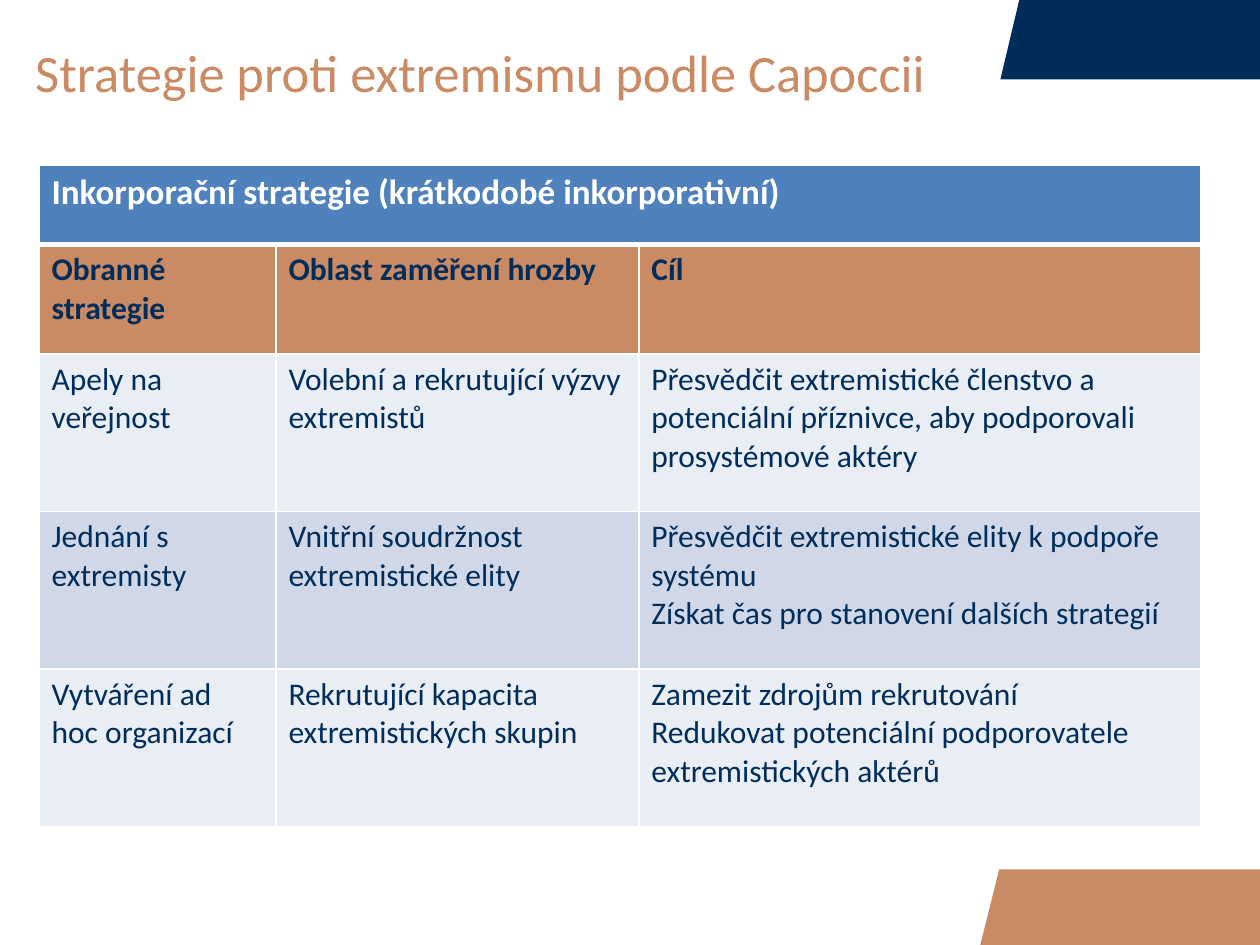
from lxml.etree import SubElement
from pptx import Presentation
from pptx.dml.color import RGBColor
from pptx.enum.text import MSO_ANCHOR
from pptx.oxml.ns import qn
from pptx.util import Inches, Pt

W, H = 10, 7.5
FONT = "Calibri"
COLORS = {
    "navy": "002D5A",
    "copper": "CA8A64",
    "blue": "4F81BD",
    "light": "E9EDF4",
    "mid": "D0D8E8",
    "white": "FFFFFF",
}
TITLE = "Strategie proti extremismu podle Capoccii"
HEADING = "Inkorporační strategie (krátkodobé inkorporativní)"
COLUMNS = ["Obranné strategie", "Oblast zaměření hrozby", "Cíl"]
STRATEGIES = [
    ["Apely na veřejnost",
     "Volební a rekrutující výzvy extremistů",
     "Přesvědčit extremistické členstvo a potenciální příznivce, "
     "aby podporovali prosystémové aktéry"],
    ["Jednání s extremisty",
     "Vnitřní soudržnost extremistické elity",
     "Přesvědčit extremistické elity k podpoře systému\n"
     "Získat čas pro stanovení dalších strategií"],
    ["Vytváření ad hoc organizací",
     "Rekrutující kapacita extremistických skupin",
     "Zamezit zdrojům rekrutování\n"
     "Redukovat potenciální podporovatele extremistických aktérů"],
]
COL_WIDTHS = [1.88, 2.88, 4.46]
ROW_HEIGHTS = [0.63, 0.87] + [1.25] * len(STRATEGIES)


def rgb(name):
    return RGBColor.from_string(COLORS[name])


def style_text(tf, size, color, bold=False):
    for p in tf.paragraphs:
        for r in p.runs:
            r.font.name = FONT
            r.font.size = Pt(size)
            r.font.bold = bold
            r.font.color.rgb = rgb(color)


def add_corner(slide, box, color, slant=0.15):
    x, y, w, h = box
    builder = slide.shapes.build_freeform(Inches(x), Inches(y + h), scale=1.0)
    corners = [(x + slant, y), (x + w, y), (x + w, y + h)]
    builder.add_line_segments([(Inches(a), Inches(b)) for a, b in corners])
    sp = builder.convert_to_shape()
    sp.shadow.inherit = False
    sp.fill.solid()
    sp.fill.fore_color.rgb = rgb(color)
    sp.line.fill.background()


def add_title(slide, box):
    tf = slide.shapes.add_textbox(*map(Inches, box)).text_frame
    tf.word_wrap = True
    tf.vertical_anchor = MSO_ANCHOR.MIDDLE
    tf.margin_left = tf.margin_right = Inches(0.28)
    tf.text = TITLE
    style_text(tf, 30, "copper")


def set_borders(cell, bottom=1):
    tcPr = cell._tc.get_or_add_tcPr()
    for side, width in (("L", 1), ("R", 1), ("T", 1), ("B", bottom)):
        ln = SubElement(tcPr, qn(f"a:ln{side}"), w=str(Pt(width)))
        fill = SubElement(ln, qn("a:solidFill"))
        SubElement(fill, qn("a:srgbClr"), val=COLORS["white"])


def fill_cell(cell, text, size, color, fill, bold=False, bottom=1):
    cell.text_frame.text = text
    style_text(cell.text_frame, size, color, bold)
    set_borders(cell, bottom)
    cell.fill.solid()
    cell.fill.fore_color.rgb = rgb(fill)


def add_strategy_table(slide, box):
    table = slide.shapes.add_table(
        len(ROW_HEIGHTS), len(COL_WIDTHS), *map(Inches, box)).table
    for column, width in zip(table.columns, COL_WIDTHS):
        column.width = Inches(width)
    for row, height in zip(table.rows, ROW_HEIGHTS):
        row.height = Inches(height)

    table.cell(0, 0).merge(table.cell(0, len(COL_WIDTHS) - 1))
    for c in range(len(COL_WIDTHS)):
        fill_cell(table.cell(0, c), "" if c else HEADING,
                  20, "white", "blue", bold=True, bottom=3)
    for r, texts in enumerate([COLUMNS] + STRATEGIES, start=1):
        is_header = r == 1
        fill = "copper" if is_header else ("mid" if r % 2 else "light")
        for c, text in enumerate(texts):
            fill_cell(table.cell(r, c), text, 18, "navy", fill, bold=is_header)


def main():
    prs = Presentation()
    prs.slide_width, prs.slide_height = Inches(W), Inches(H)
    slide = prs.slides.add_slide(prs.slide_layouts[6])
    add_corner(slide, (7.94, 0, W - 7.94, 0.63), "navy")
    add_corner(slide, (7.78, H - 0.6, W - 7.78, 0.6), "copper")
    add_title(slide, (0, 0, W, 1.14))
    add_strategy_table(
        slide, (0.31, 1.31, sum(COL_WIDTHS), sum(ROW_HEIGHTS)))
    prs.save("out.pptx")


if __name__ == "__main__":
    main()
